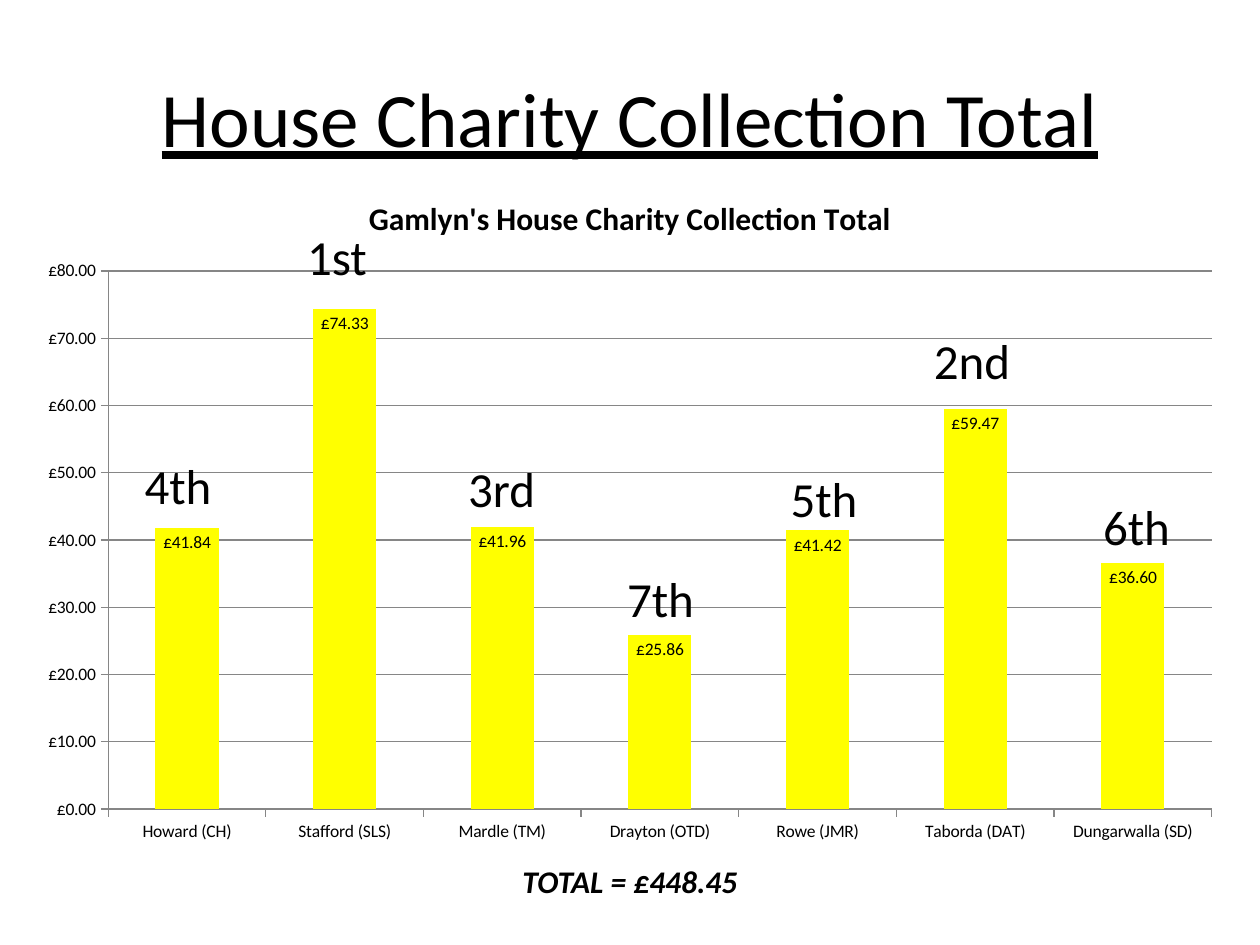
from pptx import Presentation
from pptx.chart.data import CategoryChartData
from pptx.dml.color import RGBColor
from pptx.enum.chart import XL_CHART_TYPE, XL_LABEL_POSITION, XL_TICK_MARK
from pptx.enum.text import MSO_ANCHOR, MSO_AUTO_SIZE, PP_ALIGN
from pptx.util import Emu, Pt

SCALE = 914400 / 126
MONEY = '"£"#,##0.00'
TOTALS = {
    "Howard (CH)": 41.84,
    "Stafford (SLS)": 74.33,
    "Mardle (TM)": 41.96,
    "Drayton (OTD)": 25.86,
    "Rowe (JMR)": 41.42,
    "Taborda (DAT)": 59.47,
    "Dungarwalla (SD)": 36.6,
}
# Rank, left and top in px
RANKS = [
    ("1st", 282, 220),
    ("4th", 123, 449),
    (" 3rd", 441, 452),
    (" 7th", 600, 562),
    ("5th", 769, 462),
    (" 6th", 1076, 490),
    ("2nd", 917, 324),
]


def px(*nums):
    return [Emu(round(n * SCALE)) for n in nums]


def color(code):
    return RGBColor.from_string(code)


def style(font, size, ink="000000", face="Calibri", bold=False, italic=False, line=False):
    font.name, font.size = face, Pt(size)
    font.bold, font.italic, font.underline = bold, italic, line
    font.color.rgb = color(ink)


def write(frame, text, **form):
    """Put one centred, formatted line in a text frame."""
    para = frame.paragraphs[0]
    para.alignment = PP_ALIGN.CENTER
    run = para.add_run()
    run.text = text
    style(run.font, **form)


class Deck:
    """Holds the chart style and the current slide."""

    bar, grid = "FFFF00", "868686"

    def __init__(self):
        self.file = Presentation()
        self.file.slide_width, self.file.slide_height = px(1260, 945)
        self.slide = self.file.slides.add_slide(self.file.slide_layouts[5])

    def title(self, text, box):
        shape = self.slide.shapes.title
        shape.left, shape.top, shape.width, shape.height = px(*box)
        shape.text_frame.vertical_anchor = MSO_ANCHOR.MIDDLE
        write(shape.text_frame, text, size=44, line=True)

    def label(self, text, box, **form):
        frame = self.slide.shapes.add_textbox(*px(*box)).text_frame
        frame.word_wrap = True
        frame.auto_size = MSO_AUTO_SIZE.SHAPE_TO_FIT_TEXT
        write(frame, text, **form)

    def chart(self, head, totals, box):
        data = CategoryChartData(number_format=MONEY)
        data.categories = list(totals)
        data.add_series("Series 1", list(totals.values()))
        chart = self.slide.shapes.add_chart(
            XL_CHART_TYPE.COLUMN_CLUSTERED, *px(*box), data).chart
        style(chart.font, 10)
        chart.has_legend = False
        chart.has_title = True
        write(chart.chart_title.text_frame, head, size=18, bold=True)
        chart.chart_title.include_in_layout = False

        for axis in (chart.category_axis, chart.value_axis):
            axis.major_tick_mark = XL_TICK_MARK.OUTSIDE
            self.rule(axis.format.line)
        scale = chart.value_axis
        scale.minimum_scale, scale.maximum_scale, scale.major_unit = 0, 80, 10
        scale.tick_labels.number_format = MONEY
        scale.tick_labels.number_format_is_linked = False
        self.rule(scale.major_gridlines.format.line)

        plot = chart.plots[0]
        plot.gap_width = 150
        plot.vary_by_categories = False
        fill = plot.series[0].format.fill
        fill.solid()
        fill.fore_color.rgb = color(self.bar)
        plot.has_data_labels = True
        tags = plot.data_labels
        tags.show_value = True
        tags.position = XL_LABEL_POSITION.INSIDE_END
        tags.number_format = MONEY
        tags.number_format_is_linked = False
        style(tags.font, 10)

    def rule(self, line):
        line.color.rgb = color(self.grid)
        line.width = Pt(0.75)


def main():
    deck = Deck()
    deck.title("House Charity Collection Total", (63, 38, 1134, 157))
    deck.chart("Gamlyn's House Charity Collection Total", TOTALS, (24, 170, 1212, 685))
    for rank, left, top in RANKS:
        deck.label(rank, (left, top, 110, 72), size=28)
    deck.label("TOTAL = £448.45", (0, 856, 1260, 50), size=18, bold=True, italic=True)
    deck.file.save("out.pptx")


if __name__ == "__main__":
    main()
